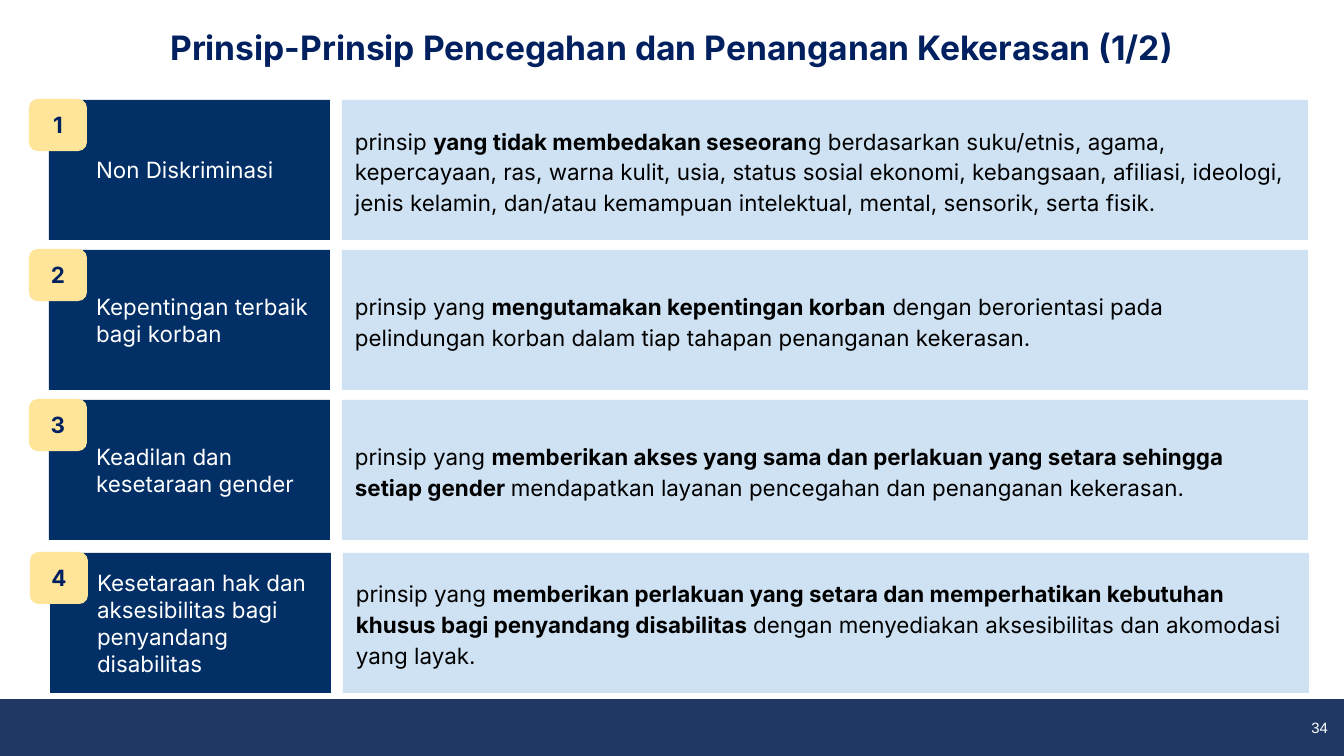
"""Build the slide on the principles of preventing and handling violence."""
from dataclasses import dataclass

from pptx import Presentation
from pptx.dml.color import RGBColor
from pptx.enum.shapes import MSO_SHAPE
from pptx.enum.text import MSO_ANCHOR, MSO_AUTO_SIZE, PP_ALIGN
from pptx.util import Pt

RECT, ROUND = MSO_SHAPE.RECTANGLE, MSO_SHAPE.ROUNDED_RECTANGLE
LEFT, CENTER, RIGHT = PP_ALIGN.LEFT, PP_ALIGN.CENTER, PP_ALIGN.RIGHT
TOP, MIDDLE = MSO_ANCHOR.TOP, MSO_ANCHOR.MIDDLE
WIDTH, HEIGHT = 1344, 756
COLORS = {
    "footer": "1F3864",
    "label": "012F66",
    "badge": "FFE59A",
    "body": "CFE2F3",
    "navy": "002060",
    "black": "000000",
    "white": "FFFFFF",
}


@dataclass(frozen=True)
class Box:
    x: int
    y: int
    w: int
    h: int


@dataclass(frozen=True)
class Style:
    color: str
    size: int = 12
    bold: bool = False
    align: PP_ALIGN = LEFT
    anchor: MSO_ANCHOR = MIDDLE
    spacing: float = 1.0
    margins: tuple[int, int] = (13, 13)
    indent: int = 0
    font: str = "Inter"


@dataclass(frozen=True)
class Principle:
    x: int
    y: int
    label: str
    before: str
    strong: str
    after: str


TITLE = Style("navy", 18, True, CENTER, TOP, 1.15)
LABEL = Style("white", margins=(13, 7), indent=34)
BADGE = Style("navy", bold=True, align=CENTER)
BODY = Style("black", spacing=1.15)
NUMBER = Style("white", 8, align=RIGHT, margins=(9, 5), font="Arial")

PRINCIPLES = [
    Principle(49, 100, "Non Diskriminasi",
              "prinsip ", "yang tidak membedakan seseoran",
              "g berdasarkan suku/etnis, agama, kepercayaan, ras, warna kulit, usia, "
              "status sosial ekonomi, kebangsaan, afiliasi, ideologi, jenis kelamin, "
              "dan/atau kemampuan intelektual, mental, sensorik, serta fisik."),
    Principle(49, 250, "Kepentingan terbaik bagi korban",
              "prinsip yang ", "mengutamakan kepentingan korban",
              " dengan berorientasi pada pelindungan korban dalam tiap tahapan "
              "penanganan kekerasan."),
    Principle(49, 400, "Keadilan dan kesetaraan gender",
              "prinsip yang ",
              "memberikan akses yang sama dan perlakuan yang setara sehingga setiap gender ",
              "mendapatkan layanan pencegahan dan penanganan kekerasan."),
    Principle(50, 553, "Kesetaraan hak dan aksesibilitas bagi penyandang disabilitas",
              "prinsip yang ",
              "memberikan perlakuan yang setara dan memperhatikan kebutuhan khusus "
              "bagi penyandang disabilitas ",
              "dengan menyediakan aksesibilitas dan akomodasi yang layak."),
]


def px(n: int) -> int:
    return round(n * 9144000 / WIDTH)


def rgb(name: str) -> RGBColor:
    return RGBColor.from_string(COLORS[name])


def place(box: Box) -> tuple[int, ...]:
    return tuple(px(n) for n in (box.x, box.y, box.w, box.h))


def write(sp, style: Style, *texts: str) -> None:
    """Write runs into a shape, with every second run in bold."""
    tf = sp.text_frame
    tf.word_wrap = True
    tf.auto_size = MSO_AUTO_SIZE.NONE
    tf.vertical_anchor = style.anchor
    tf.margin_left = tf.margin_right = px(style.margins[0])
    tf.margin_top = tf.margin_bottom = px(style.margins[1])
    p = tf.paragraphs[0]
    p.alignment = style.align
    p.line_spacing = style.spacing
    p.space_before = Pt(0)
    if style.indent:
        pPr = p._p.get_or_add_pPr()
        pPr.set("marL", str(px(style.indent)))
        pPr.set("indent", "0")
    p.font.name = style.font
    p.font.size = Pt(style.size)
    p.font.color.rgb = rgb(style.color)
    p.font.bold = style.bold
    for i, text in enumerate(texts):
        r = p.add_run()
        r.text = text
        if i % 2:
            r.font.bold = True


def add_block(s, box: Box, fill: str, kind: MSO_SHAPE = RECT):
    sp = s.shapes.add_shape(kind, *place(box))
    sp.shadow.inherit = False
    sp.fill.solid()
    sp.fill.fore_color.rgb = rgb(fill)
    sp.line.fill.background()
    return sp


def add_principle(s, number: int, item: Principle) -> None:
    label = add_block(s, Box(item.x, item.y, 281, 140), "label")
    write(label, LABEL, item.label)
    badge = add_block(s, Box(item.x - 20, item.y - 1, 58, 52), "badge", ROUND)
    write(badge, BADGE, str(number))
    body = add_block(s, Box(item.x + 293, item.y, 966, 140), "body")
    write(body, BODY, item.before, item.strong, item.after)


def main() -> None:
    prs = Presentation()
    prs.slide_width, prs.slide_height = px(WIDTH), px(HEIGHT)
    s = prs.slides.add_slide(prs.slide_layouts[5])

    title = s.shapes.title
    title.left, title.top, title.width, title.height = place(Box(0, 8, WIDTH, 67))
    write(title, TITLE, "Prinsip-Prinsip Pencegahan dan Penanganan Kekerasan (1/2)")

    footer = add_block(s, Box(0, 700, WIDTH, 56), "footer")
    footer.line.color.rgb = rgb("footer")
    footer.line.width = Pt(1)
    number = s.shapes.add_textbox(*place(Box(1250, 714, 87, 27)))
    write(number, NUMBER, "34")

    for i, item in enumerate(PRINCIPLES, start=1):
        add_principle(s, i, item)
    prs.save("out.pptx")


if __name__ == "__main__":
    main()
